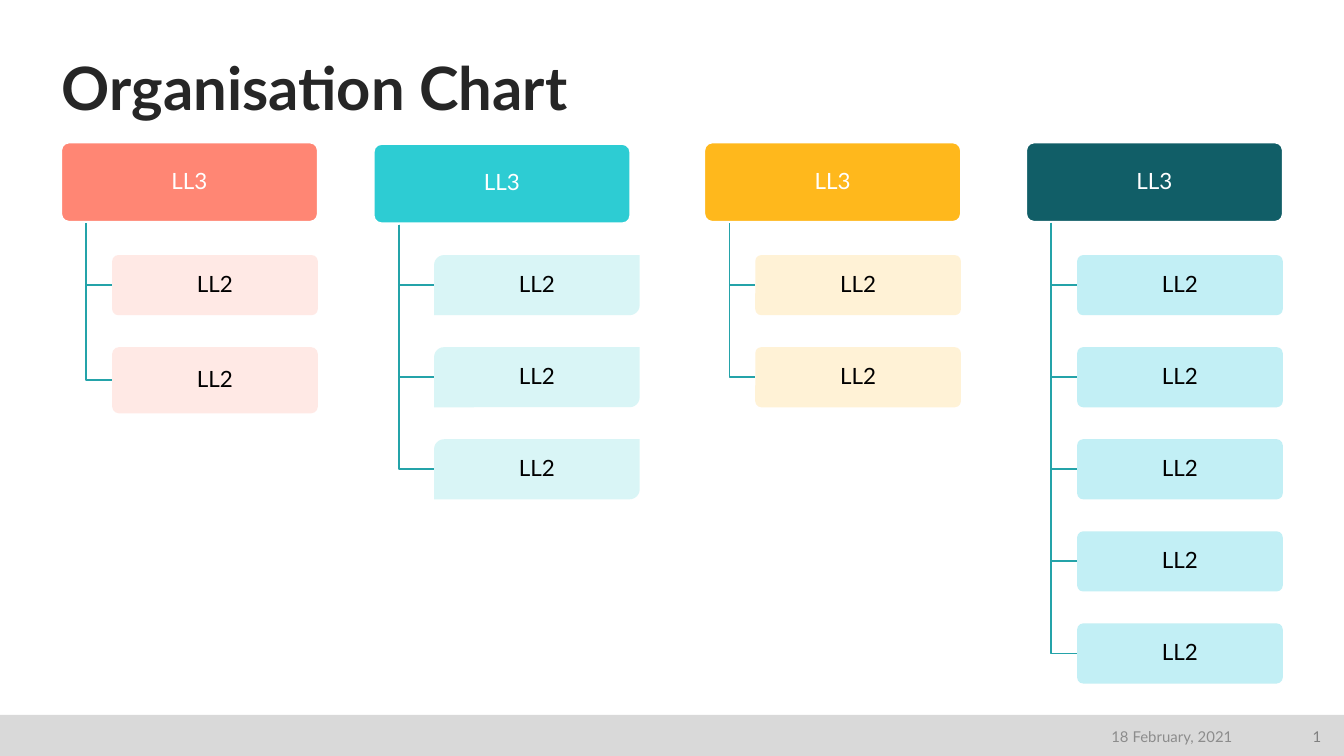
from lxml.etree import SubElement
from pptx import Presentation
from pptx.dml.color import RGBColor
from pptx.enum.shapes import MSO_SHAPE
from pptx.enum.text import MSO_ANCHOR, PP_ALIGN
from pptx.oxml.ns import qn
from pptx.util import Inches, Pt

hue = RGBColor.from_string
deck = Presentation()
deck.slide_width = Inches(10)
deck.slide_height = deck.slide_width * 9 // 16
col = deck.slide_width / 100
row = deck.slide_height / 100
slide = deck.slides.add_slide(deck.slide_layouts[6])
shapes = slide.shapes


def place(left, top, wide, high):
    return int(left * col), int(top * row), int(wide * col), int(high * row)


def write(shape, text, size, color, align, space=0.9, anchor=MSO_ANCHOR.MIDDLE, pad=None):
    frame = shape.text_frame
    frame.word_wrap = True
    frame.vertical_anchor = anchor
    if pad is not None:
        frame.margin_left = frame.margin_right = Inches(pad)
        frame.margin_top = frame.margin_bottom = Inches(pad)
    para = frame.paragraphs[0]
    para.alignment = align
    para.line_spacing = space
    run = para.add_run()
    run.text = text
    run.font.name = "Lato"
    run.font.size = Pt(size)
    run.font.color.rgb = hue(color)
    return run


bar = shapes.add_shape(MSO_SHAPE.RECTANGLE, *place(0, 94.55, 100, 5.45))
bar.shadow.inherit = False
bar.fill.solid()
bar.fill.fore_color.rgb = hue("D9D9D9")
bar.line.fill.background()

title = shapes.add_textbox(*place(4.6, 7.1, 91, 9.25))
run = write(title, "Organisation Chart", 32, "262626", PP_ALIGN.LEFT,
            anchor=MSO_ANCHOR.BOTTOM, pad=0)
run.font.bold = True

round_box = MSO_SHAPE.ROUNDED_RECTANGLE
diag_box = MSO_SHAPE.ROUND_2_DIAG_RECTANGLE
teams = [
    (4.55, 18.85, 3.8, "FF8674", "FFE7E3", round_box, [7.95, 8.75]),
    (27.8, 19.05, 4.5, "2DCCD3", "D5F5F6", diag_box, [7.95] * 3),
    (52.4, 18.85, 3.8, "FFB81C", "FFF1D2", round_box, [7.95] * 2),
    (76.35, 18.85, 3.8, "115E67", "BCEEF4", round_box, [7.95] * 5),
]
for left, top, inset, dark, pale, kind, sizes in teams:
    head = shapes.add_shape(round_box, *place(left, top, 19.1, 10.5))
    head.shadow.inherit = False
    head.adjustments[0] = 0.1
    head.fill.solid()
    head.fill.fore_color.rgb = hue(dark)
    head.line.color.rgb = hue("FFFFFF")
    head.line.width = Pt(1)
    write(head, "LL3", 12, "FFFFFF", PP_ALIGN.CENTER, pad=0.03)

    stem = (left + 1.88) * col
    side = (left + inset) * col
    for rank, high in enumerate(sizes):
        level = 33.75 + 12.18 * rank
        middle = (level + high / 2) * row
        path = shapes.build_freeform(stem, (top + 10.65) * row)
        path.add_line_segments([(stem, middle), (side, middle)], close=False)
        elbow = path.convert_to_shape()
        elbow.shadow.inherit = False
        elbow.fill.background()
        elbow.line.color.rgb = hue("24A3A9")
        elbow.line.width = Pt(1)

        box = shapes.add_shape(kind, *place(left + inset, level, 15.3, high))
        box.shadow.inherit = False
        if kind == round_box:
            box.adjustments[0] = 0.1
        box.fill.solid()
        box.fill.fore_color.rgb = hue(pale)
        tint = box.fill._xPr.find(qn("a:solidFill"))[0]
        SubElement(tint, qn("a:alpha")).set("val", "90000")
        box.line.fill.background()
        write(box, "LL2", 12, "000000", PP_ALIGN.CENTER, pad=0.03)

for left, wide, text, color in [
    (70.2, 22.5, "18 February, 2021", "8C8C8C"),
    (95.6, 3.7, "1", "808080"),
]:
    foot = shapes.add_textbox(*place(left, 95.15, wide, 4.6))
    write(foot, text, 8, color, PP_ALIGN.RIGHT, space=1.0)

deck.save("out.pptx")
